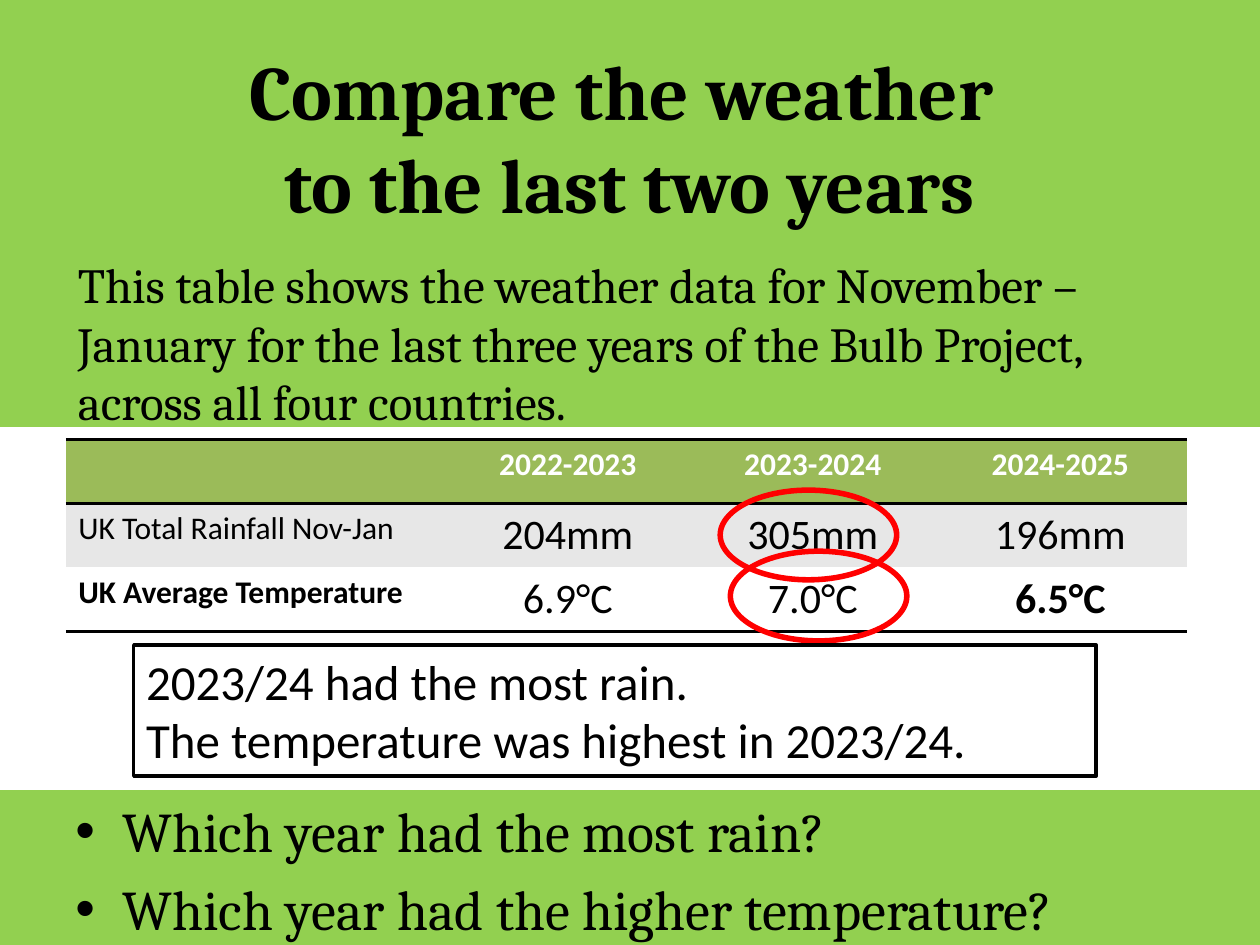
from lxml import etree
from pptx import Presentation
from pptx.dml.color import RGBColor
from pptx.enum.shapes import MSO_SHAPE
from pptx.enum.text import MSO_ANCHOR, PP_ALIGN
from pptx.oxml.ns import qn
from pptx.util import Pt

RECT, RING = MSO_SHAPE.RECTANGLE, MSO_SHAPE.DONUT
LEFT, MID, TOP = PP_ALIGN.LEFT, PP_ALIGN.CENTER, MSO_ANCHOR.TOP

BLACK = RGBColor(0x00, 0x00, 0x00)
WHITE = RGBColor(0xFF, 0xFF, 0xFF)
RED = RGBColor(0xFF, 0x00, 0x00)
LIME = RGBColor(0x92, 0xD0, 0x50)
OLIVE = RGBColor(0x9B, 0xBB, 0x59)
GREY = RGBColor(0xE7, 0xE7, 0xE7)

HEAD = ("", "2022-2023", "2023-2024", "2024-2025")
RAIN = ("UK Total Rainfall Nov-Jan", "204mm", "305mm", "196mm")
HEAT = ("UK Average Temperature", "6.9°C", "7.0°C", "6.5°C")
COLS = (216, 141.8, 138.2, 144.7)
ROW = 36.6
RULE = 2


class Page:
    serif, sans = "Cambria", "Calibri"

    def __init__(self, slide):
        self.slide = slide
        fill = slide.background.fill
        fill.solid()
        fill.fore_color.rgb = LIME

    def run(self, para, text, size, face, bold=False, color=BLACK):
        run = para.add_run()
        run.text = text
        font = run.font
        font.size, font.name, font.bold = Pt(size), face, bold
        font.color.rgb = color

    def shape(self, kind, at, fill, line=None):
        shape = self.slide.shapes.add_shape(kind, *map(Pt, at))
        shape.shadow.inherit = False
        shape.fill.solid()
        shape.fill.fore_color.rgb = fill
        if line is None:
            shape.line.fill.background()
        else:
            shape.line.color.rgb = line
            shape.line.width = Pt(RULE)
        return shape

    def ring(self, at):
        self.shape(RING, at, RED, RED).adjustments[0] = 0.022

    def text(self, at, paras, size, face, align=LEFT, bold=False, gap=0,
             mark=None, frame=None):
        """Write paras, each a list of lines; mark is an optional bullet."""
        box = self.slide.shapes.add_textbox(*map(Pt, at))
        if frame is not None:
            box.fill.solid()
            box.fill.fore_color.rgb = WHITE
            box.line.color.rgb = frame
            box.line.width = Pt(RULE)
        body = box.text_frame
        body.word_wrap = True
        body.vertical_anchor = TOP
        for i, lines in enumerate(paras):
            para = body.add_paragraph() if i else body.paragraphs[0]
            if mark:
                self.bullet(para, mark)
            para.alignment = align
            para.space_before = Pt(gap if i else 0)
            for j, line in enumerate(lines):
                if j:
                    para.add_line_break()
                self.run(para, line, size, face, bold)

    def bullet(self, para, mark):
        props = para._p.get_or_add_pPr()
        props.set("marL", str(Pt(27)))
        props.set("indent", str(Pt(-27)))
        etree.SubElement(props, qn("a:buFont")).set("typeface", "Arial")
        etree.SubElement(props, qn("a:buChar")).set("char", mark)

    def edges(self, cell, ruled):
        """Rule the named sides of a cell in black and clear the others."""
        props = cell._tc.get_or_add_tcPr()
        for side in "LRTB":
            line = etree.SubElement(props, qn("a:ln" + side))
            if side in ruled:
                line.set("w", str(Pt(RULE)))
                fill = etree.SubElement(line, qn("a:solidFill"))
                etree.SubElement(fill, qn("a:srgbClr")).set("val", str(BLACK))
            else:
                etree.SubElement(line, qn("a:noFill"))

    def cell(self, cell, text, fill, ruled, size, align, bold, color):
        self.edges(cell, ruled)
        cell.fill.solid()
        cell.fill.fore_color.rgb = fill
        para = cell.text_frame.paragraphs[0]
        para.alignment = align
        if text:
            self.run(para, text, size, self.sans, bold, color)

    def table(self, left, top, rows):
        """Draw rows of (texts, fill, ruled sides, value size, bold columns, colour)."""
        grid = self.slide.shapes.add_table(
            len(rows), len(COLS), Pt(left), Pt(top),
            Pt(sum(COLS)), Pt(ROW * len(rows))).table
        for col, width in zip(grid.columns, COLS):
            col.width = Pt(width)
        for r, (texts, fill, ruled, size, bold, color) in enumerate(rows):
            grid.rows[r].height = Pt(ROW)
            for c, text in enumerate(texts):
                self.cell(grid.cell(r, c), text, fill, ruled,
                          size if c else 18, MID if c else LEFT,
                          c in bold, color)


def main():
    deck = Presentation()
    deck.slide_width, deck.slide_height = Pt(720), Pt(540)
    page = Page(deck.slides.add_slide(deck.slide_layouts[6]))

    page.shape(RECT, (0, 244, 720, 207.4), WHITE)
    page.text((36, 21.6, 648, 90),
              [["Compare the weather ", "to the last two years"]],
              44, page.serif, MID, bold=True)
    page.table(37.6, 251, [
        (HEAD, OLIVE, "TB", 18, (1, 2, 3), WHITE),
        (RAIN, GREY, "T", 24, (), BLACK),
        (HEAT, WHITE, "B", 24, (0, 3), BLACK),
    ])
    page.text((36, 451.4, 648, 88),
              [["Which year had the most rain?"],
               ["Which year had the higher temperature?"]],
              32, page.serif, gap=6.4, mark="•")
    for left, top in ((411, 279.5), (416.8, 314.4)):
        page.ring((left, top, 102, 52.4))
    page.text((76.4, 368.5, 550, 75),
              [["2023/24 had the most rain."],
               ["The temperature was highest in 2023/24."]],
              28, page.sans, frame=BLACK)
    page.text((37.4, 141.8, 648, 111),
              [["This table shows the weather data for November – January for "
                "the last three years of the Bulb Project, across all four "
                "countries."]],
              28, page.serif)
    deck.save("out.pptx")


if __name__ == "__main__":
    main()
